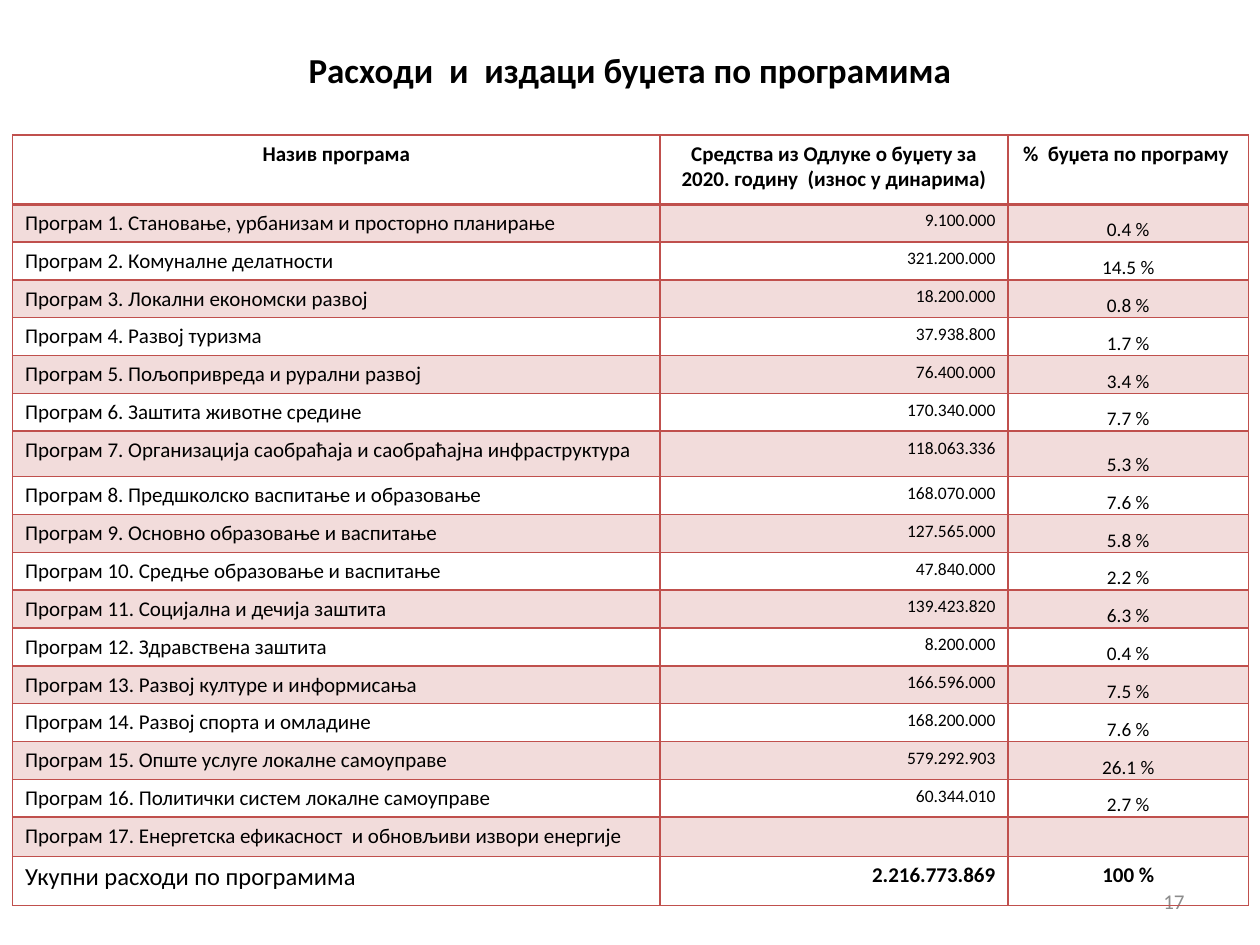
"""Build the slide of budget expenditure by programme."""
from lxml import etree
from pptx import Presentation
from pptx.dml.color import RGBColor
from pptx.enum.text import MSO_ANCHOR, PP_ALIGN
from pptx.oxml.ns import qn
from pptx.util import Inches, Pt

LEFT, CENTER, RIGHT = PP_ALIGN.LEFT, PP_ALIGN.CENTER, PP_ALIGN.RIGHT
TOP, MIDDLE, BOTTOM = MSO_ANCHOR.TOP, MSO_ANCHOR.MIDDLE, MSO_ANCHOR.BOTTOM

THEME = {
    "font": "Calibri", "ink": "000000", "muted": "8C8C8C", "accent": "C0504D", "band_alpha": 20,
    "title": 20, "total": 14, "body": 12, "percent": 11, "amount": 10, "rule": 1, "head_rule": 2,
}

TITLE = "Расходи  и  издаци буџета по програмима"
PAGE = "17"
HEADER = ("Назив програма", "Средства из Одлуке о буџету за 2020. годину  (износ у динарима)",
          "%  буџета по програму ")
PROGRAMS = [
    ("Становање, урбанизам и просторно планирање", "9.100.000", "0.4 %"),
    ("Комуналне делатности", "321.200.000", "14.5 %"),
    ("Локални економски развој", "18.200.000", "0.8 %"),
    ("Развој туризма", "37.938.800", "1.7 %"),
    ("Пољопривреда и рурални развој", "76.400.000", "3.4 %"),
    ("Заштита животне средине", "170.340.000", "7.7 %"),
    ("Организација саобраћаја и саобраћајна инфраструктура", "118.063.336", "5.3 %"),
    ("Предшколско васпитање и образовање", "168.070.000", "7.6 %"),
    ("Основно образовање и васпитање", "127.565.000", "5.8 %"),
    ("Средње образовање и васпитање", "47.840.000", "2.2 %"),
    ("Социјална и дечија заштита", "139.423.820", "6.3 %"),
    ("Здравствена заштита", "8.200.000", "0.4 %"),
    ("Развој културе и информисања", "166.596.000", "7.5 %"),
    ("Развој спорта и омладине", "168.200.000", "7.6 %"),
    ("Опште услуге локалне самоуправе", "579.292.903", "26.1 %"),
    ("Политички систем локалне самоуправе", "60.344.010", "2.7 %"),
    ("Енергетска ефикасност  и обновљиви извори енергије", "", ""),
]
TOTAL = ("Укупни расходи по програмима", "2.216.773.869", "100 %")

COLUMNS = (5.14, 2.76, 1.91)
ROW = 0.29
SPECIAL_ROWS = {0: 0.55, 7: 0.36, 17: 0.31, 18: 0.39}
ALIGNS = (LEFT, RIGHT, CENTER)
TIGHT = {"margin_left": 0.01, "margin_top": 0.01, "margin_right": 0.01, "margin_bottom": 0}


def write(tf, text, size, align, bold=False, color=THEME["ink"]):
    p = tf.paragraphs[0]
    p.alignment = align
    if not text:
        etree.SubElement(p._p, qn("a:endParaRPr"), sz=str(size * 100))
        return
    r = p.add_run()
    r.text = text
    for name, value in {"size": Pt(size), "name": THEME["font"], "bold": bold}.items():
        setattr(r.font, name, value)
    r.font.color.rgb = RGBColor.from_string(color)


def add_borders(cell, bottom):
    tc_pr = cell._tc.get_or_add_tcPr()
    for side in "LRTB":
        width = bottom if side == "B" else THEME["rule"]
        ln = etree.SubElement(tc_pr, qn(f"a:ln{side}"), w=str(Pt(width)))
        fill = etree.SubElement(ln, qn("a:solidFill"))
        etree.SubElement(fill, qn("a:srgbClr"), val=THEME["accent"])


def fill_cell(cell, banded):
    if not banded:
        cell.fill.background()
        return
    cell.fill.solid()
    cell.fill.fore_color.rgb = RGBColor.from_string(THEME["accent"])
    color = cell._tc.tcPr.find(".//" + qn("a:solidFill") + "/" + qn("a:srgbClr"))
    for color in cell._tc.tcPr.find(qn("a:solidFill")):
        etree.SubElement(color, qn("a:alpha"), val=str(THEME["band_alpha"] * 1000))


def add_budget_table(s):
    names = [(f"Програм {i}. {name}", *rest) for i, (name, *rest) in enumerate(PROGRAMS, 1)]
    rows = [HEADER, *names, TOTAL]
    last = len(rows) - 1
    heights = [SPECIAL_ROWS.get(i, ROW) for i in range(len(rows))]
    box = [Inches(v) for v in (0.1, 1.07, sum(COLUMNS), sum(heights))]
    table = s.shapes.add_table(len(rows), len(COLUMNS), *box).table
    table.first_row = table.horz_banding = False
    for column, width in zip(table.columns, COLUMNS):
        column.width = Inches(width)
    program_sizes = (THEME["body"], THEME["amount"], THEME["percent"])
    total_sizes = (THEME["total"], THEME["body"], THEME["body"])
    for i, texts in enumerate(rows):
        table.rows[i].height = Inches(heights[i])
        head, total = i == 0, i == last
        sizes = (THEME["body"],) * 3 if head else total_sizes if total else program_sizes
        for j, text in enumerate(texts):
            cell = table.cell(i, j)
            write(cell.text_frame, text, sizes[j], CENTER if head else ALIGNS[j],
                  bold=head or (total and j > 0))
            if j == 2 and text and not head and not total:
                cell.vertical_anchor = BOTTOM
                for name, value in TIGHT.items():
                    setattr(cell, name, Inches(value))
            else:
                cell.vertical_anchor = TOP
            add_borders(cell, THEME["head_rule"] if head else THEME["rule"])
            fill_cell(cell, not total and i % 2 == 1)


def main():
    prs = Presentation()
    prs.slide_width, prs.slide_height = Inches(10), Inches(7.5)
    s = prs.slides.add_slide(prs.slide_layouts[5])
    title = s.shapes.title
    for name, value in {"left": 0.74, "top": 0.13, "width": 8.52, "height": 0.85}.items():
        setattr(title, name, Inches(value))
    number = s.shapes.add_textbox(*[Inches(v) for v in (7.17, 6.95, 2.33, 0.4)])
    for sp in (title, number):
        sp.text_frame.word_wrap = True
        sp.text_frame.vertical_anchor = MIDDLE
    write(title.text_frame, TITLE, THEME["title"], CENTER, bold=True)
    write(number.text_frame, PAGE, THEME["body"], RIGHT, color=THEME["muted"])
    add_budget_table(s)
    prs.save("out.pptx")


if __name__ == "__main__":
    main()
